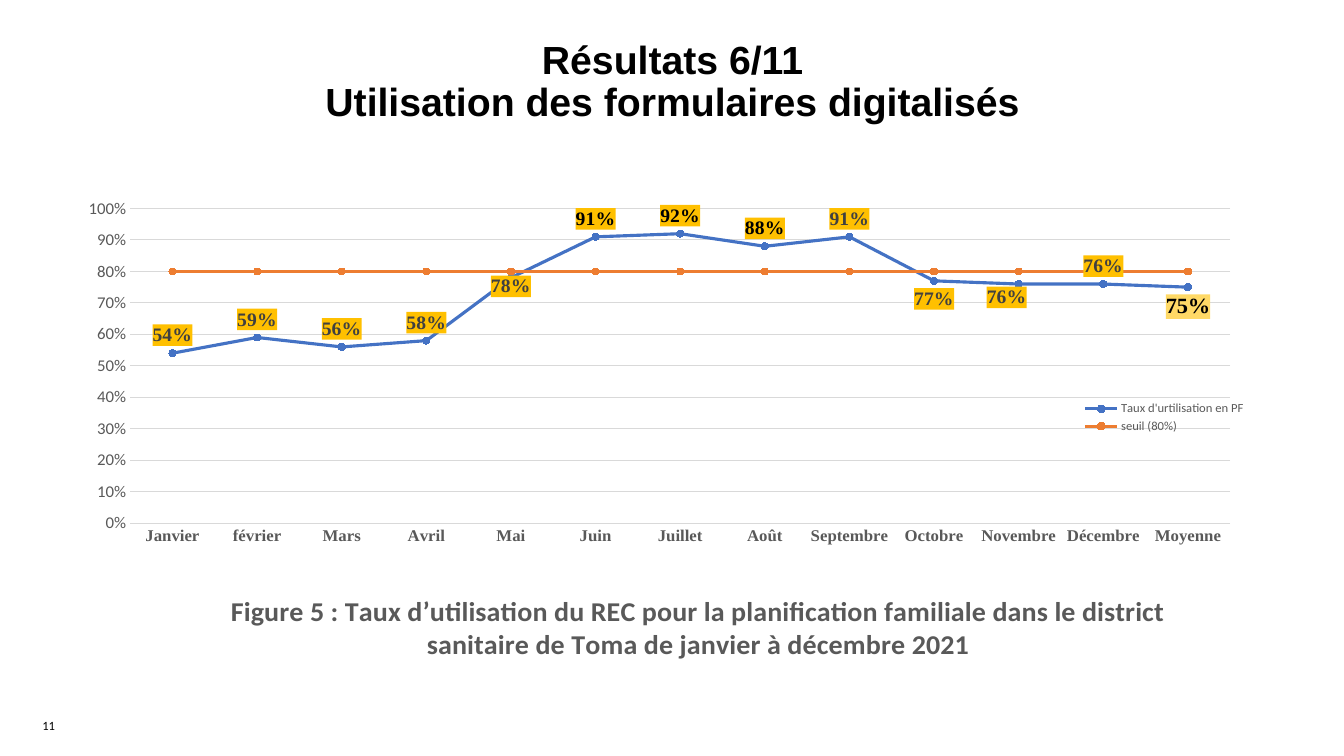
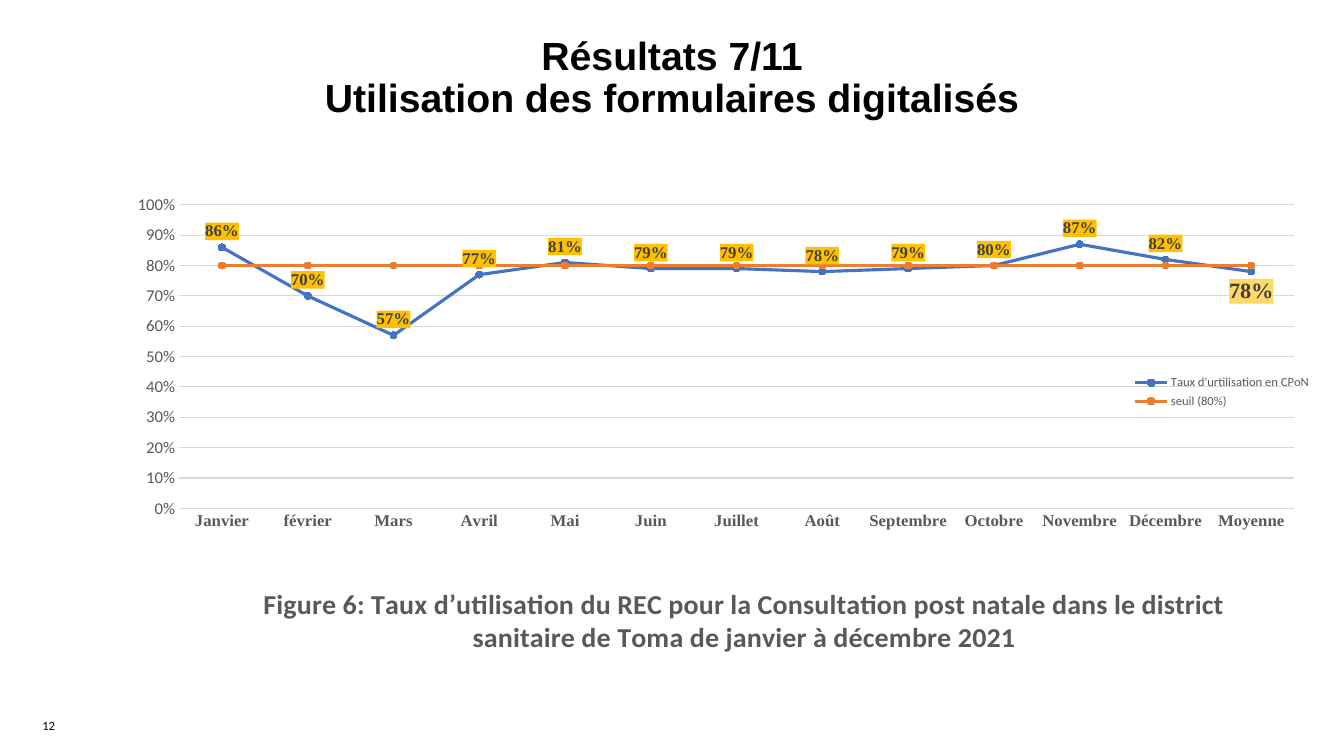
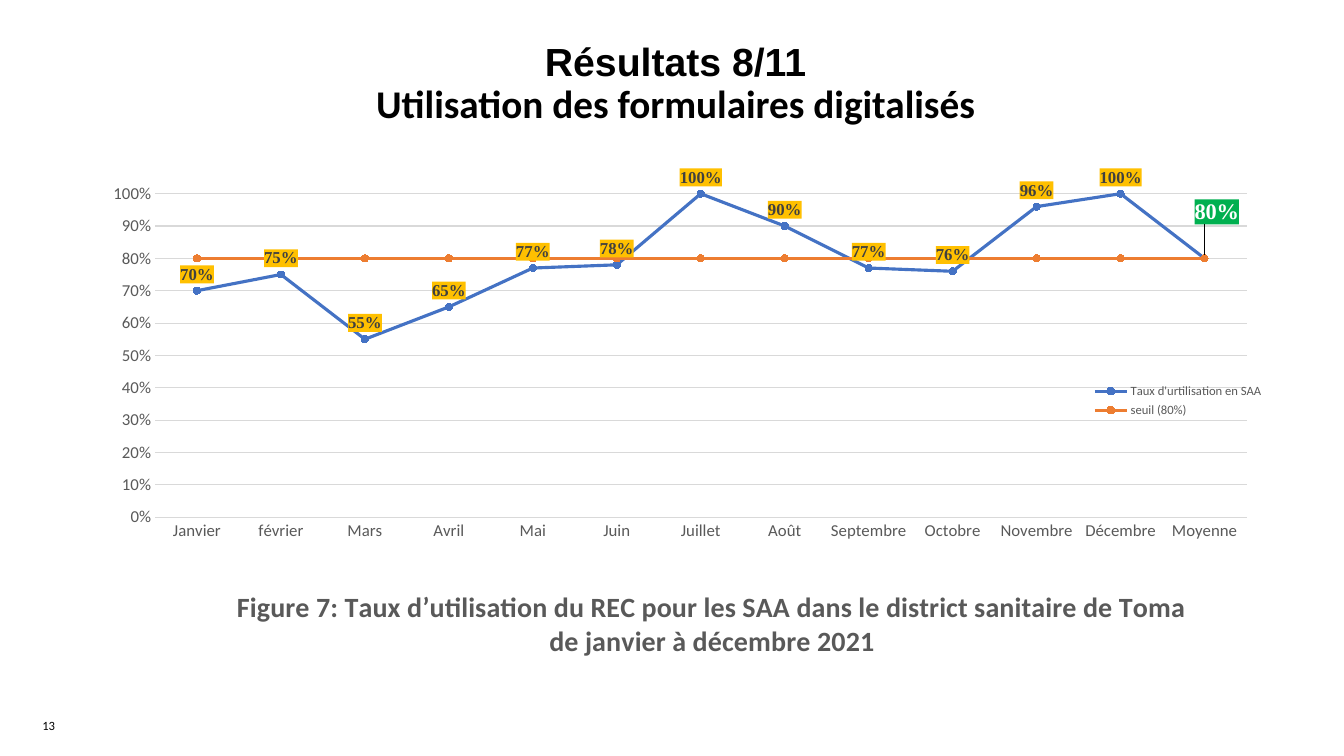
from lxml import etree
from pptx import Presentation
from pptx.chart.data import CategoryChartData
from pptx.dml.color import RGBColor
from pptx.enum.chart import XL_CHART_TYPE as CT, XL_LABEL_POSITION as LP
from pptx.enum.chart import XL_LEGEND_POSITION, XL_MARKER_STYLE, XL_TICK_MARK
from pptx.enum.text import MSO_ANCHOR, MSO_AUTO_SIZE, PP_ALIGN
from pptx.oxml import parse_xml
from pptx.oxml.ns import nsdecls, qn
from pptx.util import Inches, Pt

BLACK = RGBColor(0x00, 0x00, 0x00)
WHITE = RGBColor(0xFF, 0xFF, 0xFF)
GREY = RGBColor(0x59, 0x59, 0x59)
DARK = RGBColor(0x40, 0x40, 0x40)
RULE = RGBColor(0xD9, 0xD9, 0xD9)
BLUE = RGBColor(0x44, 0x72, 0xC4)
ORANGE = RGBColor(0xED, 0x7D, 0x31)
GREEN = RGBColor(0x00, 0xB0, 0x50)
AMBER = RGBColor(0xFF, 0xC0, 0x00)
PALE = RGBColor(0xFF, 0xD9, 0x66)
SERIF, SANS, TITLE_FONT = "Times New Roman", "Calibri", "Arial"

MONTHS = ["Janvier", "février", "Mars", "Avril", "Mai", "Juin", "Juillet",
          "Août", "Septembre", "Octobre", "Novembre", "Décembre", "Moyenne"]
MEAN = len(MONTHS) - 1
THRESHOLD = 80
FIRST_NUMBER = 11
SUBTITLE = "Utilisation des formulaires digitalisés"

# special: month -> (position, size, colour, shift)
SLIDES = [
    dict(heading="Résultats 6/11", heading_box=(1.96, 0.4, 9.42, 0.97),
         subtitle_font=TITLE_FONT,
         caption="Figure 5 : Taux d’utilisation du REC pour la planification familiale "
                 "dans le district sanitaire de Toma de janvier à décembre 2021",
         series="Taux d'urtilisation en PF",
         values=[54, 59, 56, 58, 78, 91, 92, 88, 91, 77, 76, 76, 75],
         green=[5, 6, 7, 8, 9], box=(0.58, 1.86, 11.86, 4.79),
         plot=(0.06, 0.045, 0.92, 0.67), caption_at=(0.14, 0.85),
         legend=(0.855, 0.45, 0.14, 0.08), months=(SERIF, True), label_size=14,
         mean_fill=PALE,
         special={4: (LP.BELOW, 14, DARK, (0, -0.02)),
                  5: (LP.ABOVE, 14, BLACK, None),
                  6: (LP.ABOVE, 14, BLACK, None),
                  7: (LP.ABOVE, 14, BLACK, None),
                  9: (LP.BELOW, 14, DARK, None),
                  10: (LP.BELOW, 14, DARK, (-0.01, -0.01)),
                  MEAN: (LP.BELOW, 16, BLACK, None)}),
    dict(heading="Résultats 7/11", heading_box=(1.96, 0.36, 9.41, 1.07),
         subtitle_font=TITLE_FONT,
         caption="Figure 6: Taux d’utilisation du REC pour la Consultation post natale "
                 "dans le district sanitaire de Toma de janvier à décembre 2021",
         series="Taux d'urtilisation en CPoN",
         values=[86, 70, 57, 77, 81, 79, 79, 78, 79, 80, 87, 82, 78],
         green=[9, 10, 11], box=(0.99, 1.43, 12.1, 5.15),
         plot=(0.065, 0.12, 0.914, 0.6), caption_at=(0.13, 0.86),
         legend=(0.845, 0.45, 0.15, 0.08), months=(SERIF, True), label_size=12,
         mean_fill=PALE, special={MEAN: (LP.BELOW, 16, DARK, None)}),
    dict(heading="Résultats 8/11", heading_box=(0.42, 0.42, 12.56, 0.89),
         subtitle_font=SANS,
         caption="Figure 7: Taux d’utilisation du REC pour les SAA "
                 "dans le district sanitaire de Toma de janvier à décembre 2021",
         series="Taux d'urtilisation en SAA",
         values=[70, 75, 55, 65, 77, 78, 100, 90, 77, 76, 96, 100, 80],
         green=[6, 7, 10, 11], box=(0.52, 1.31, 12.11, 5.31),
         plot=(0.084, 0.116, 0.894, 0.608), caption_at=(0.147, 0.845),
         legend=(0.852, 0.465, 0.14, 0.08), months=(SANS, False), label_size=12,
         mean_fill=GREEN, special={MEAN: (LP.ABOVE, 16, WHITE, (0.01, -0.05))}),
]


def style(font, size, color, name=SANS, bold=False):
    font.size, font.name, font.bold = Pt(size), name, bold
    font.color.rgb = color


def set_layout(el, index, box, inner=False, edge=True):
    for old in el.findall(qn("c:layout")):
        el.remove(old)
    layout = parse_xml(f"<c:layout {nsdecls('c')}><c:manualLayout/></c:layout>")
    parts = [("layoutTarget", "inner")] if inner else []
    if edge:
        parts += [("xMode", "edge"), ("yMode", "edge")]
    parts += zip("xywh", box)
    for tag, val in parts:
        etree.SubElement(layout[0], qn("c:" + tag)).set("val", str(val))
    el.insert(index, layout)


def add_heading(slide, data):
    title = slide.shapes.title
    title.left, title.top, title.width, title.height = map(Inches, data["heading_box"])
    tf = title.text_frame
    tf.text = data["heading"] + "\n" + SUBTITLE
    tf.margin_left = tf.margin_right = tf.margin_top = tf.margin_bottom = 0
    tf.vertical_anchor, tf.auto_size = MSO_ANCHOR.TOP, MSO_AUTO_SIZE.NONE
    for p, name in zip(tf.paragraphs, (TITLE_FONT, data["subtitle_font"])):
        p.alignment, p.line_spacing, p.space_before = PP_ALIGN.CENTER, 0.9, Pt(0)
        style(p.runs[0].font, 28, BLACK, name, True)


def add_number(slide, number):
    tf = slide.shapes.add_textbox(*map(Inches, (0.42, 7.12, 0.95, 0.15))).text_frame
    tf.margin_left = tf.margin_right = tf.margin_top = tf.margin_bottom = 0
    tf.word_wrap = True
    tf.text = str(number)
    style(tf.paragraphs[0].runs[0].font, 9, BLACK)


def format_axes(chart, months):
    cat, val = chart.category_axis, chart.value_axis
    for axis in (cat, val):
        axis.major_tick_mark = axis.minor_tick_mark = XL_TICK_MARK.NONE
    style(cat.tick_labels.font, 12, GREY, *months)
    style(val.tick_labels.font, 12, GREY)
    val.tick_labels.number_format = "0%"
    val.tick_labels.number_format_is_linked = False
    val.minimum_scale, val.maximum_scale, val.major_unit = 0, 1, 0.1
    val.format.line.fill.background()
    for line in (cat.format.line, val.major_gridlines.format.line):
        line.color.rgb, line.width = RULE, Pt(0.75)


def add_labels(chart, rate, data):
    labels = rate.data_labels
    labels.show_value, labels.position = True, LP.ABOVE
    labels.number_format, labels.number_format_is_linked = "0%", False
    style(labels.font, data["label_size"], DARK, SERIF, True)
    for i, (position, size, color, _) in data["special"].items():
        label = rate.points[i].data_label
        style(label.font, size, color, SERIF, True)
        label.position = position
    for text in chart._chartSpace.xpath(".//c:dLbls//c:txPr"):
        holder = text.getparent()
        idx = holder.find(qn("c:idx"))
        month = None if idx is None else int(idx.get("val"))
        fill = data["mean_fill"] if month == MEAN else AMBER
        text.addprevious(parse_xml(
            f'<c:spPr {nsdecls("c", "a")}><a:solidFill><a:srgbClr val="{fill}"/>'
            "</a:solidFill></c:spPr>"))
        shift = data["special"][month][3] if month is not None else None
        if shift:
            set_layout(holder, 1, shift, edge=False)


def add_rate_chart(slide, data):
    cd = CategoryChartData(number_format="0%")
    cd.categories = MONTHS
    cd.add_series(data["series"], [v / 100 for v in data["values"]])
    cd.add_series(f"seuil ({THRESHOLD}%)", [THRESHOLD / 100] * len(MONTHS))
    chart = slide.shapes.add_chart(CT.LINE_MARKERS, *map(Inches, data["box"]), cd).chart
    style(chart.font, 10, BLACK)
    plot = chart.plots[0]
    plot.vary_by_categories = False
    for ser, color in zip(plot.series, (BLUE, ORANGE)):
        ser.smooth = False
        ser.format.line.color.rgb, ser.format.line.width = color, Pt(2.25)
        paint_marker(ser.marker, color)
    rate = plot.series[0]
    for i in data["green"]:
        paint_marker(rate.points[i].marker, GREEN)
    add_labels(chart, rate, data)
    format_axes(chart, data["months"])

    chart.has_title = True
    tf = chart.chart_title.text_frame
    tf.text = data["caption"]
    style(tf.paragraphs[0].runs[0].font, 20, GREY, SANS, True)
    chart.has_legend = True
    chart.legend.position = XL_LEGEND_POSITION.RIGHT
    chart.legend.include_in_layout = False
    style(chart.legend.font, 9, GREY)

    root = chart._chartSpace.chart
    set_layout(root.find(qn("c:title")), 1, data["caption_at"])
    set_layout(root.find(qn("c:legend")), 1, data["legend"])
    set_layout(root.plotArea, 0, data["plot"], inner=True)


def paint_marker(marker, color):
    marker.style, marker.size = XL_MARKER_STYLE.CIRCLE, 5
    marker.format.fill.solid()
    marker.format.fill.fore_color.rgb = color
    marker.format.line.color.rgb = color


def main():
    prs = Presentation()
    prs.slide_width, prs.slide_height = Inches(13.33), Inches(7.5)
    for number, data in enumerate(SLIDES, FIRST_NUMBER):
        slide = prs.slides.add_slide(prs.slide_layouts[5])
        add_heading(slide, data)
        add_rate_chart(slide, data)
        add_number(slide, number)
    prs.save("out.pptx")


if __name__ == "__main__":
    main()
